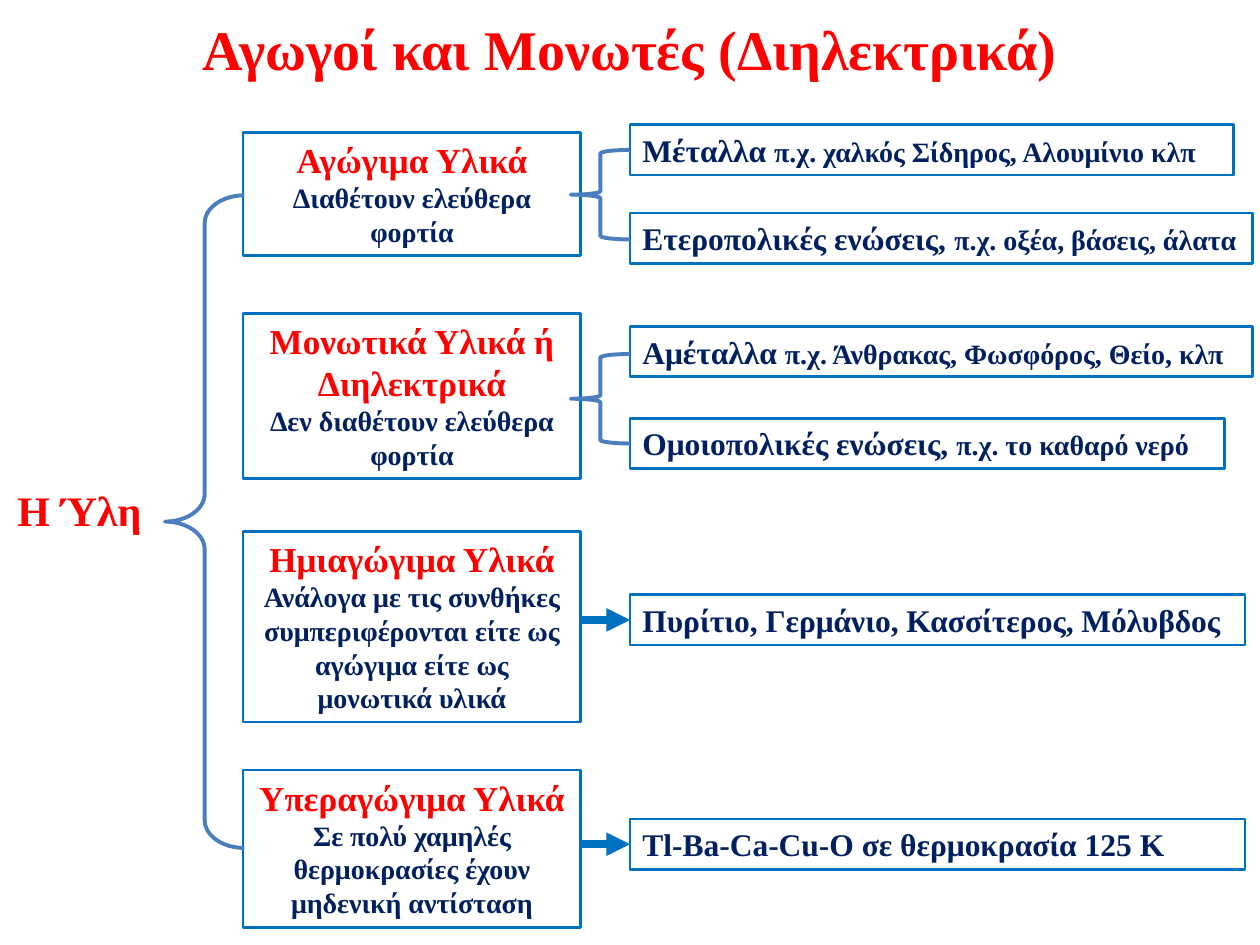
import pptx
import pptx.util
import pptx.dml.color
import pptx.enum.shapes
import pptx.enum.text
from lxml import etree
from pptx.oxml.ns import qn

Inches = pptx.util.Inches
Shapes = pptx.enum.shapes.MSO_SHAPE
Align = pptx.enum.text.PP_ALIGN
Anchor = pptx.enum.text.MSO_ANCHOR
AutoSize = pptx.enum.text.MSO_AUTO_SIZE

RED, NAVY, BLUE, BRACE_BLUE = "FF0000", "002060", "0070C0", "4B7EBC"
FONT = "Times New Roman"

TITLE = "Αγωγοί και Μονωτές (Διηλεκτρικά)"
ROOT = "Η Ύλη"

# Each example: top, width, main text, smaller text
MATERIALS = [
    {"name": "Αγώγιμα Υλικά", "detail": "Διαθέτουν ελεύθερα φορτία",
     "top": 1.05, "height": 0.98, "brace_top": 1.19,
     "examples": [
         (0.99, 4.79, "Μέταλλα ", "π.χ. χαλκός Σίδηρος, Αλουμίνιο κλπ"),
         (1.69, 4.94, "Ετεροπολικές ενώσεις, ", "π.χ. οξέα, βάσεις, άλατα")]},
    {"name": "Μονωτικά Υλικά ή Διηλεκτρικά", "detail": "Δεν διαθέτουν ελεύθερα φορτία",
     "top": 2.49, "height": 1.31, "brace_top": 2.81,
     "examples": [
         (2.59, 4.94, "Αμέταλλα ", "π.χ. Άνθρακας, Φωσφόρος, Θείο, κλπ"),
         (3.32, 4.72, "Ομοιοπολικές ενώσεις, ", "π.χ. το καθαρό νερό")]},
    {"name": "Ημιαγώγιμα Υλικά",
     "detail": "Ανάλογα με τις συνθήκες συμπεριφέρονται είτε ως αγώγιμα είτε ως μονωτικά υλικά",
     "top": 4.22, "height": 1.51,
     "examples": [(4.72, 4.88, "Πυρίτιο, Γερμάνιο, Κασσίτερος, Μόλυβδος", "")]},
    {"name": "Υπεραγώγιμα Υλικά",
     "detail": "Σε πολύ χαμηλές θερμοκρασίες έχουν μηδενική αντίσταση",
     "top": 6.11, "height": 1.25,
     "examples": [(6.5, 4.88, "Tl-Ba-Ca-Cu-O σε θερμοκρασία 125 Κ", "")]},
]

MATERIAL_LEFT, MATERIAL_WIDTH = 1.93, 2.68
MATERIAL_RIGHT = MATERIAL_LEFT + MATERIAL_WIDTH
EXAMPLE_LEFT, EXAMPLE_HEIGHT = 5, 0.4
BRACE_LEFT, BRACE_HEIGHT = 4.53, 0.71


def color(value):
    return pptx.dml.color.RGBColor.from_string(value)


def write(shape, paragraphs, align, **frame_format):
    """Fill a shape with paragraphs, each a list of (text, size, colour) runs."""
    frame = shape.text_frame
    settings = {"word_wrap": True, "vertical_anchor": Anchor.TOP, **frame_format}
    for name, value in settings.items():
        setattr(frame, name, value)
    for index, runs in enumerate(paragraphs):
        paragraph = frame.add_paragraph() if index else frame.paragraphs[0]
        paragraph.alignment = align
        for text, size, text_color in runs:
            run = paragraph.add_run()
            run.text = text
            font_format = {"name": FONT, "size": pptx.util.Pt(size), "bold": True}
            for name, value in font_format.items():
                setattr(run.font, name, value)
            run.font.color.rgb = color(text_color)


def add_outline(slide, kind, box, line_color, line_width):
    shape = slide.shapes.add_shape(kind, *map(Inches, box))
    shape.shadow.inherit = False
    shape.fill.background()
    shape.line.color.rgb = color(line_color)
    shape.line.width = pptx.util.Pt(line_width)
    return shape


def add_box(slide, box, paragraphs, align):
    shape = add_outline(slide, Shapes.RECTANGLE, box, BLUE, 1.5)
    write(shape, paragraphs, align, auto_size=AutoSize.SHAPE_TO_FIT_TEXT)
    return shape


def add_brace(slide, box, curve):
    brace = add_outline(slide, Shapes.LEFT_BRACE, box, BRACE_BLUE, 2.25)
    brace.adjustments[0] = curve
    brace.adjustments[1] = 0.5


def add_arrow(slide, target):
    """Draw an arrow from the material column to the left side of target."""
    middle = target.top + target.height // 2
    arrow = slide.shapes.add_connector(
        pptx.enum.shapes.MSO_CONNECTOR.STRAIGHT,
        Inches(MATERIAL_RIGHT), middle, target.left, middle)
    arrow.end_connect(target, 1)
    arrow.line.color.rgb = color(BLUE)
    arrow.line.width = pptx.util.Pt(4.5)
    etree.SubElement(arrow.line._get_or_add_ln(), qn("a:tailEnd"), type="triangle")
    etree.SubElement(arrow._element.spPr, qn("a:effectLst"))


def add_material(slide, material):
    add_box(slide, (MATERIAL_LEFT, material["top"], MATERIAL_WIDTH, material["height"]),
            [[(material["name"], 20, RED)], [(material["detail"], 16, NAVY)]], Align.CENTER)
    for top, width, main, extra in material["examples"]:
        runs = [(main, 18, NAVY)] + ([(extra, 16, NAVY)] if extra else [])
        example = add_box(slide, (EXAMPLE_LEFT, top, width, EXAMPLE_HEIGHT), [runs], Align.LEFT)
    if "brace_top" in material:
        add_brace(slide, (BRACE_LEFT, material["brace_top"],
                          EXAMPLE_LEFT - BRACE_LEFT, BRACE_HEIGHT), 0.06)
    else:
        add_arrow(slide, example)


def main():
    presentation = pptx.Presentation()
    presentation.slide_width, presentation.slide_height = Inches(10), Inches(7.5)
    slide = presentation.slides.add_slide(presentation.slide_layouts[6])

    title = slide.shapes.add_textbox(*map(Inches, (0.5, 0.05, 9, 0.66)))
    write(title, [[(TITLE, 32, RED)]], Align.CENTER, vertical_anchor=Anchor.MIDDLE)
    root = slide.shapes.add_textbox(*map(Inches, (0.04, 3.8, 1.19, 0.5)))
    write(root, [[(ROOT, 24, RED)]], Align.LEFT, word_wrap=False,
          auto_size=AutoSize.SHAPE_TO_FIT_TEXT)

    for material in MATERIALS:
        add_material(slide, material)
    add_brace(slide, (1.31, 1.55, 0.63, 5.18), 0.35)

    presentation.save("out.pptx")


if __name__ == "__main__":
    main()
